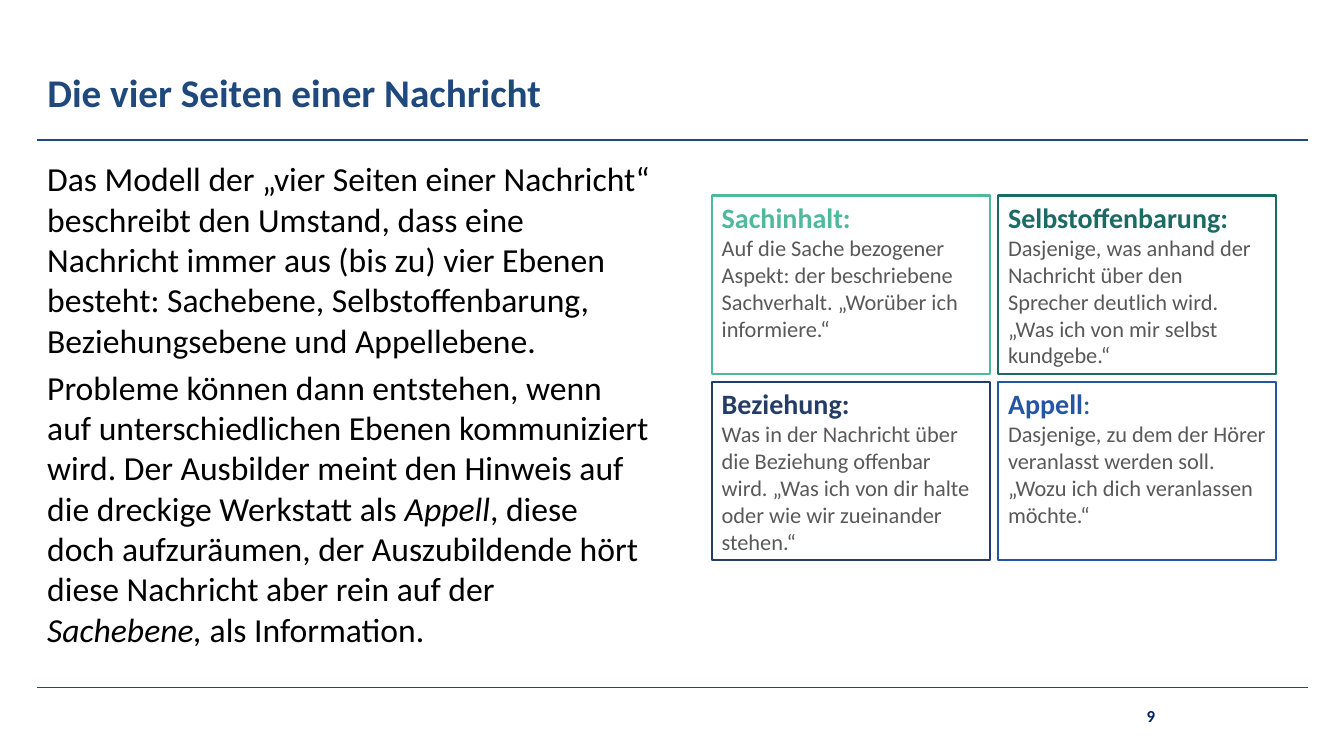
from dataclasses import dataclass

from lxml import etree
from pptx import Presentation
from pptx.dml.color import RGBColor
from pptx.enum.shapes import MSO_CONNECTOR, MSO_SHAPE
from pptx.enum.text import MSO_ANCHOR, MSO_AUTO_SIZE, PP_ALIGN
from pptx.oxml.ns import qn
from pptx.util import Inches, Pt

RECT = MSO_SHAPE.RECTANGLE
LINE = MSO_CONNECTOR.STRAIGHT
TOP, MIDDLE = MSO_ANCHOR.TOP, MSO_ANCHOR.MIDDLE
LEFT, CENTER = PP_ALIGN.LEFT, PP_ALIGN.CENTER
FIXED = MSO_AUTO_SIZE.NONE

FONT = "Calibri"
BLUE, NAVY, GREY, BLACK = "1F497D", "002060", "595959", "000000"
EDGE, WIDTH = 0.37, 12.6
GRID_X, GRID_Y = 7.06, 1.94
CARD_W, CARD_H, GAP = 2.76, 1.77, 0.08


@dataclass
class Part:
    text: str
    italic: bool = False


@dataclass
class Card:
    head: str
    tail: str
    text: str
    color: str


BODY = [
    [Part("Das Modell der „vier Seiten einer Nachricht“ beschreibt den Umstand, "
          "dass eine Nachricht immer aus (bis zu) vier Ebenen besteht: Sachebene, "
          "Selbstoffenbarung, Beziehungsebene und Appellebene.")],
    [Part("Probleme können dann entstehen, wenn auf unterschiedlichen Ebenen "
          "kommuniziert wird. Der Ausbilder meint den Hinweis auf die dreckige "
          "Werkstatt als "),
     Part("Appell", True),
     Part(", diese doch aufzuräumen, der Auszubildende hört diese Nachricht "
          "aber rein auf der "),
     Part("Sachebene,", True),
     Part(" als Information.")],
]

CARDS = [
    Card("Sachinhalt:", "",
         "Auf die Sache bezogener Aspekt: der beschriebene Sachverhalt. "
         "„Worüber ich informiere.“", "4EB99D"),
    Card("Selbstoffenbarung:", "",
         "Dasjenige, was anhand der Nachricht über den Sprecher deutlich wird. "
         "„Was ich von mir selbst kundgebe.“", "1B6A64"),
    Card("Beziehung:", "",
         "Was in der Nachricht über die Beziehung offenbar wird. "
         "„Was ich von dir halte oder wie wir zueinander stehen.“", "243D66"),
    Card("Appell", ":",
         "Dasjenige, zu dem der Hörer veranlasst werden soll. "
         "„Wozu ich dich veranlassen möchte.“", "2555A4"),
]


def rgb(code: str) -> RGBColor:
    return RGBColor.from_string(code)


def add_run(para, text: str, size: float, color: str,
            bold: bool = False, italic: bool = False) -> None:
    run = para.add_run()
    run.text = text
    font = run.font
    font.name, font.size = FONT, Pt(size)
    font.bold, font.italic = bold, italic
    font.color.rgb = rgb(color)


def set_up(frame, anchor=TOP, align=LEFT):
    """Prepare a text frame and return its first paragraph."""
    frame.word_wrap = True
    frame.auto_size = FIXED
    frame.vertical_anchor = anchor
    para = frame.paragraphs[0]
    para.alignment = align
    return para


def add_box(slide, x: float, y: float, w: float, h: float):
    return slide.shapes.add_textbox(Inches(x), Inches(y), Inches(w), Inches(h)).text_frame


def add_rule(slide, y: float, weight: float) -> None:
    rule = slide.shapes.add_connector(
        LINE, Inches(EDGE), Inches(y), Inches(EDGE + WIDTH), Inches(y))
    rule.line.color.rgb = rgb(BLUE)
    rule.line.width = Pt(weight)
    etree.SubElement(rule._element.spPr, qn("a:effectLst"))


def add_title(slide) -> None:
    title = slide.shapes.title
    title.left, title.top = Inches(EDGE), Inches(0.48)
    title.width, title.height = Inches(9.54), Inches(0.87)
    para = set_up(title.text_frame, MIDDLE)
    add_run(para, "Die vier Seiten einer Nachricht", 28, BLUE, bold=True)


def add_body(slide) -> None:
    frame = add_box(slide, EDGE, 1.52, 6.19, 5.25)
    para = set_up(frame)
    for i, parts in enumerate(BODY):
        if i:
            para = frame.add_paragraph()
            para.space_before = Pt(4.8)
        for part in parts:
            add_run(para, part.text, 24, BLACK, italic=part.italic)


def add_card(slide, card: Card, x: float, y: float) -> None:
    shape = slide.shapes.add_shape(
        RECT, Inches(x), Inches(y), Inches(CARD_W), Inches(CARD_H))
    shape.shadow.inherit = False
    shape.fill.background()
    shape.line.color.rgb = rgb(card.color)
    shape.line.width = Pt(1.5)
    para = set_up(shape.text_frame)
    add_run(para, card.head, 20, card.color, bold=True)
    if card.tail:
        add_run(para, card.tail, 20, card.color)
    para.add_line_break()
    add_run(para, card.text, 16, GREY)


def main() -> None:
    deck = Presentation()
    deck.slide_width, deck.slide_height = Inches(13.33), Inches(7.5)
    slide = deck.slides.add_slide(deck.slide_layouts[5])
    add_rule(slide, 1.39, 1.5)
    add_rule(slide, 6.82, 1)
    page = set_up(add_box(slide, 9.86, 6.9, 3.11, 0.4), MIDDLE, CENTER)
    add_run(page, "9", 12, NAVY, bold=True)
    add_body(slide)
    add_title(slide)
    for i, card in enumerate(CARDS):
        row, col = divmod(i, 2)
        add_card(slide, card, GRID_X + col * (CARD_W + GAP),
                 GRID_Y + row * (CARD_H + GAP))
    deck.save("out.pptx")


if __name__ == "__main__":
    main()
